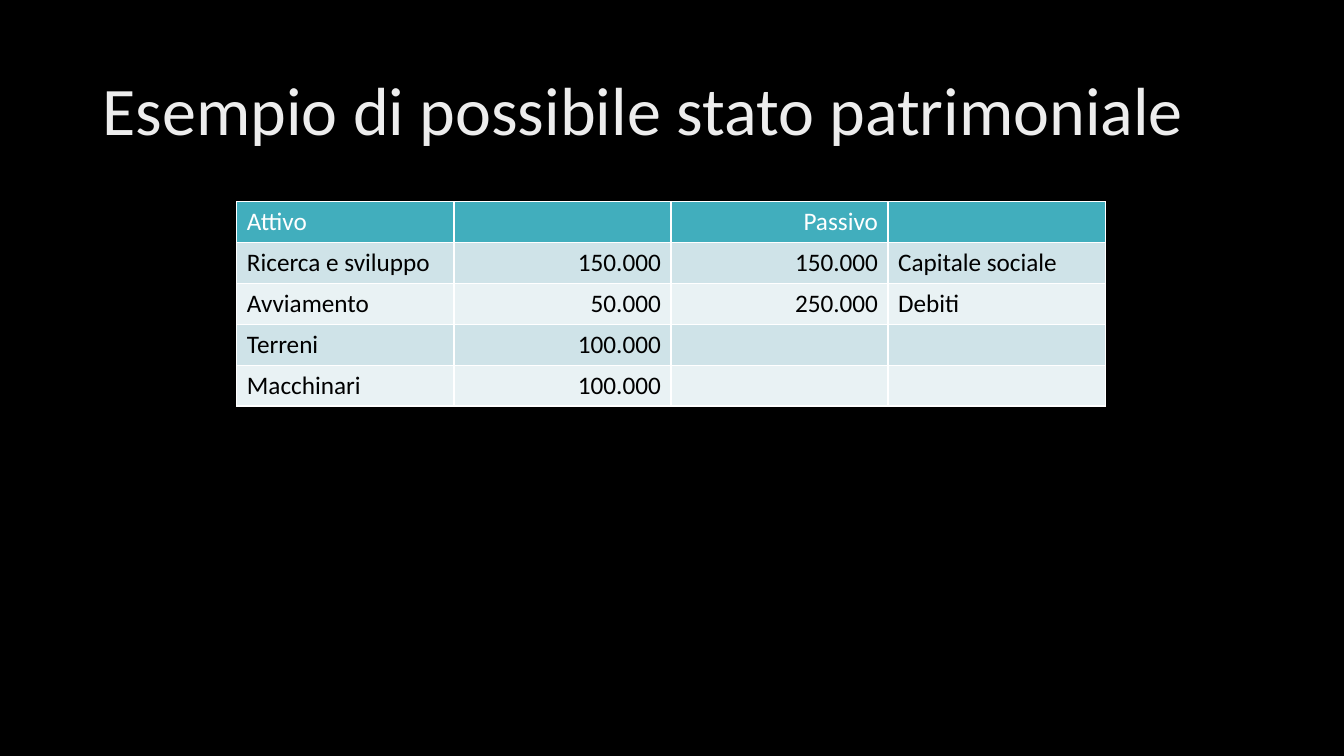
from pptx import Presentation
from pptx.dml.color import RGBColor
from pptx.enum.text import MSO_ANCHOR, MSO_AUTO_SIZE, PP_ALIGN
from pptx.oxml import parse_xml
from pptx.oxml.ns import nsdecls
from pptx.util import Cm, Pt

TITLE = "Esempio di possibile stato patrimoniale"
ROWS = [
    ("Attivo", "", "Passivo", ""),
    ("Ricerca e sviluppo", "150.000", "150.000", "Capitale sociale"),
    ("Avviamento", "50.000", "250.000", "Debiti"),
    ("Terreni", "100.000", "", ""),
    ("Macchinari", "100.000", "", ""),
]
ALIGNS = [PP_ALIGN.LEFT, PP_ALIGN.RIGHT, PP_ALIGN.RIGHT, PP_ALIGN.LEFT]
HEADER_FILL = "41AEBD"
BAND_FILLS = ["E9F2F4", "CFE3E8"]
COL_W, ROW_H = 5.47, 1.03
TITLE_FONT = {"name": "Calibri", "size": Pt(48.6), "bold": False}
CELL_FONT = {"name": "Calibri", "size": Pt(18), "bold": False}


def rgb(value):
    return RGBColor.from_string(value)


def set_font(font, formats, color):
    for name, value in formats.items():
        setattr(font, name, value)
    font.color.rgb = rgb(color)


def add_borders(cell, color="FFFFFF", width=Pt(1)):
    tc_pr = cell._tc.get_or_add_tcPr()
    for side in ("L", "R", "T", "B"):
        tc_pr.append(parse_xml(
            f'<a:ln{side} {nsdecls("a")} w="{width}"><a:solidFill>'
            f'<a:srgbClr val="{color}"/></a:solidFill></a:ln{side}>'))


def add_title(s):
    sp = s.shapes.title
    place = {"left": Cm(2.33), "top": Cm(1.01), "width": Cm(29.21), "height": Cm(3.68)}
    for name, value in place.items():
        setattr(sp, name, value)
    tf = sp.text_frame
    tf.text = TITLE
    layout = {"word_wrap": True, "auto_size": MSO_AUTO_SIZE.NONE,
              "vertical_anchor": MSO_ANCHOR.MIDDLE}
    for name, value in layout.items():
        setattr(tf, name, value)
    p = tf.paragraphs[0]
    p.alignment = PP_ALIGN.LEFT
    p.line_spacing = 0.9
    set_font(p.runs[0].font, TITLE_FONT, "EDEDED")


def add_balance_sheet(s):
    n_rows, n_cols = len(ROWS), len(ALIGNS)
    table = s.shapes.add_table(n_rows, n_cols, Cm(5.97), Cm(5.08),
                               Cm(COL_W * n_cols), Cm(ROW_H * n_rows)).table
    for i, row in enumerate(ROWS):
        fill = BAND_FILLS[i % 2] if i else HEADER_FILL
        color = "000000" if i else "FFFFFF"
        for j, text in enumerate(row):
            cell = table.cell(i, j)
            add_borders(cell)
            cell.fill.solid()
            cell.fill.fore_color.rgb = rgb(fill)
            cell.text = text
            p = cell.text_frame.paragraphs[0]
            p.alignment = ALIGNS[j]
            set_font(p.font, CELL_FONT, color)
            for r in p.runs:
                set_font(r.font, CELL_FONT, color)


def main():
    prs = Presentation()
    prs.slide_width, prs.slide_height = Cm(33.87), Cm(19.05)
    s = prs.slides.add_slide(prs.slide_layouts[5])
    s.background.fill.solid()
    s.background.fill.fore_color.rgb = rgb("000000")
    add_title(s)
    add_balance_sheet(s)
    prs.save("out.pptx")


if __name__ == "__main__":
    main()
